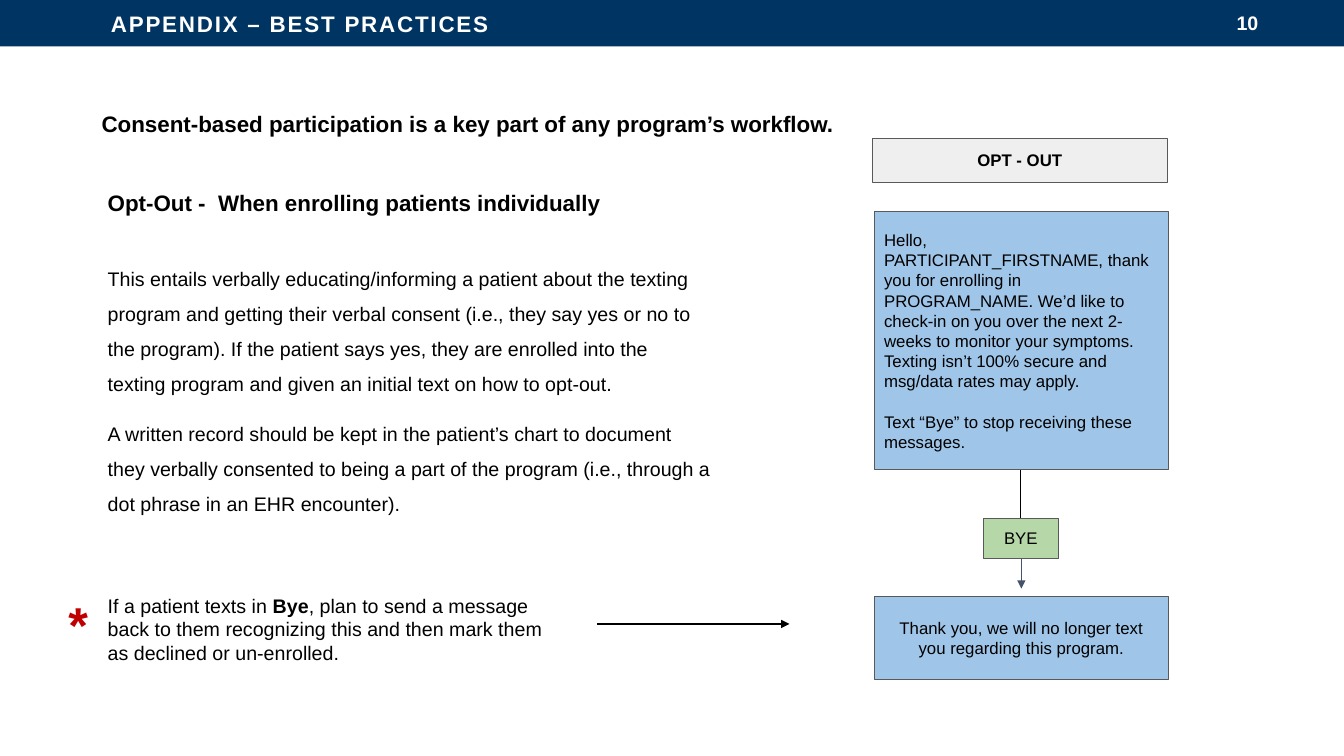
import pptx
import pptx.util
import pptx.dml.color
import pptx.enum.shapes
import pptx.enum.text
import pptx.oxml.ns
from lxml import etree

PX = 9144  # EMU per px, 100 px to the inch
ALIGN = pptx.enum.text.PP_ALIGN
MIDDLE = pptx.enum.text.MSO_ANCHOR.MIDDLE
qn = pptx.oxml.ns.qn


def rgb(value):
    return pptx.dml.color.RGBColor.from_string(value)


def write(sp, paragraphs, size, color="000000", bold=False, align=ALIGN.LEFT):
    """Fill a shape with paragraphs, each a list of (text, bold) runs or a string."""
    tf = sp.text_frame
    tf.word_wrap = True
    for i, runs in enumerate(paragraphs):
        p = tf.add_paragraph() if i else tf.paragraphs[0]
        p.alignment = align
        p.font.name, p.font.size = "Arial", pptx.util.Pt(size)
        p.font.color.rgb = rgb(color)
        if isinstance(runs, str):
            p.font.bold = bold
            runs = [(runs, None)]
        for text, run_bold in runs:
            r = p.add_run()
            r.text, r.font.bold = text, run_bold
    return tf


prs = pptx.Presentation()
prs.slide_width, prs.slide_height = 1333 * PX, 750 * PX
s = prs.slides.add_slide(prs.slide_layouts[6])

# Connectors sit behind the boxes: x1, y1, x2, y2, colour, width, arrowhead
connectors = [
    (1013, 532, 1013, 584, "44546A", 0.75, True),
    (1012, 422, 1012, 515, "000000", 0.75, False),
    (592, 619, 783, 619, "000000", 1, True),
]
for x1, y1, x2, y2, color, width, arrow in connectors:
    line = s.shapes.add_connector(pptx.enum.shapes.MSO_CONNECTOR.STRAIGHT,
                                  x1 * PX, y1 * PX, x2 * PX, y2 * PX)
    line.line.color.rgb = rgb(color)
    line.line.width = pptx.util.Pt(width)
    if arrow:
        etree.SubElement(line.line._get_or_add_ln(), qn("a:tailEnd"), type="triangle")
    etree.SubElement(line._element.spPr, qn("a:effectLst"))

# Header bar and flow boxes: place, fill, outline, paragraphs, size, colour, bold, align
message = [
    "Hello,",
    "PARTICIPANT_FIRSTNAME, thank you for enrolling in PROGRAM_NAME. We’d like to "
    "check-in on you over the next 2-weeks to monitor your symptoms. Texting isn’t "
    "100% secure and msg/data rates may apply.",
    "Text “Bye” to stop receiving these messages.",
]
reply = ["Thank you, we will no longer text you regarding this program."]
boxes = [
    ((0, 0, 1333, 46), "003462", None, ["APPENDIX – BEST PRACTICES"], 16, "FFFFFF", True, ALIGN.LEFT),
    ((865, 137, 293, 44), "EFEFEF", "595959", ["OPT - OUT"], 12, "000000", True, ALIGN.CENTER),
    ((867, 210, 292, 256), "9FC5E8", "595959", message, 12, "000000", False, ALIGN.LEFT),
    ((975, 514, 75, 40), "B6D7A8", "595959", ["BYE"], 12, "000000", False, ALIGN.CENTER),
    ((867, 592, 292, 82), "9FC5E8", "595959", reply, 12, "000000", False, ALIGN.CENTER),
]
frames = []
for place, fill, outline, paragraphs, size, color, bold, align in boxes:
    sp = s.shapes.add_shape(pptx.enum.shapes.MSO_SHAPE.RECTANGLE, *[v * PX for v in place])
    sp.shadow.inherit = False
    sp.fill.solid()
    sp.fill.fore_color.rgb = rgb(fill)
    if outline:
        sp.line.color.rgb = rgb(outline)
        sp.line.width = pptx.util.Pt(0.75)
    else:
        sp.line.fill.background()
    tf = write(sp, paragraphs, size, color, bold, align)
    tf.vertical_anchor = MIDDLE
    tf.margin_left = tf.margin_right = tf.margin_top = tf.margin_bottom = 10 * PX
    frames.append(tf)

header, _, greeting, _, _ = frames
header.margin_left = 110 * PX
header.paragraphs[0].runs[0].font._element.set("spc", "130")
greeting.paragraphs[-1].space_before = pptx.util.Pt(14.4)

# Text boxes: place, paragraphs, size, colour, bold, align
opt_out = [
    "Opt-Out -  When enrolling patients individually",
    "This entails verbally educating/informing a patient about the texting program and "
    "getting their verbal consent (i.e., they say yes or no to the program). If the patient "
    "says yes, they are enrolled into the texting program and given an initial text on how "
    "to opt-out.",
    "A written record should be kept in the patient’s chart to document they verbally "
    "consented to being a part of the program (i.e., through a dot phrase in an EHR encounter).",
]
bye_note = [[
    ("If a patient texts in ", None),
    ("Bye", True),
    (", plan to send a message back to them recognizing this and then mark them as "
     "declined or un-enrolled.", None),
]]
claim = ["Consent-based participation is a key part of any program’s workflow."]
texts = [
    ((91, 104, 1017, 37), claim, 16, "000000", True, ALIGN.LEFT),
    ((97, 169, 619, 356), opt_out, 14, "000000", False, ALIGN.LEFT),
    ((97, 584, 462, 81), bye_note, 14, "000000", False, ALIGN.LEFT),
    ((58, 583, 49, 71), ["*"], 36, "C00000", True, ALIGN.LEFT),
    ((958, 2, 300, 40), ["10"], 14, "FFFFFF", True, ALIGN.RIGHT),
]
for place, paragraphs, size, color, bold, align in texts:
    sp = s.shapes.add_textbox(*[v * PX for v in place])
    tf = write(sp, paragraphs, size, color, bold, align)
    if paragraphs is opt_out:
        for p, gap in zip(tf.paragraphs, (10, 28, 10)):
            p.line_spacing, p.space_before = 1.5, pptx.util.Pt(gap)
        tf.paragraphs[0].font.size = pptx.util.Pt(16)
        tf.paragraphs[0].font.bold = True
    elif align == ALIGN.RIGHT:
        tf.vertical_anchor = MIDDLE

prs.save("out.pptx")
